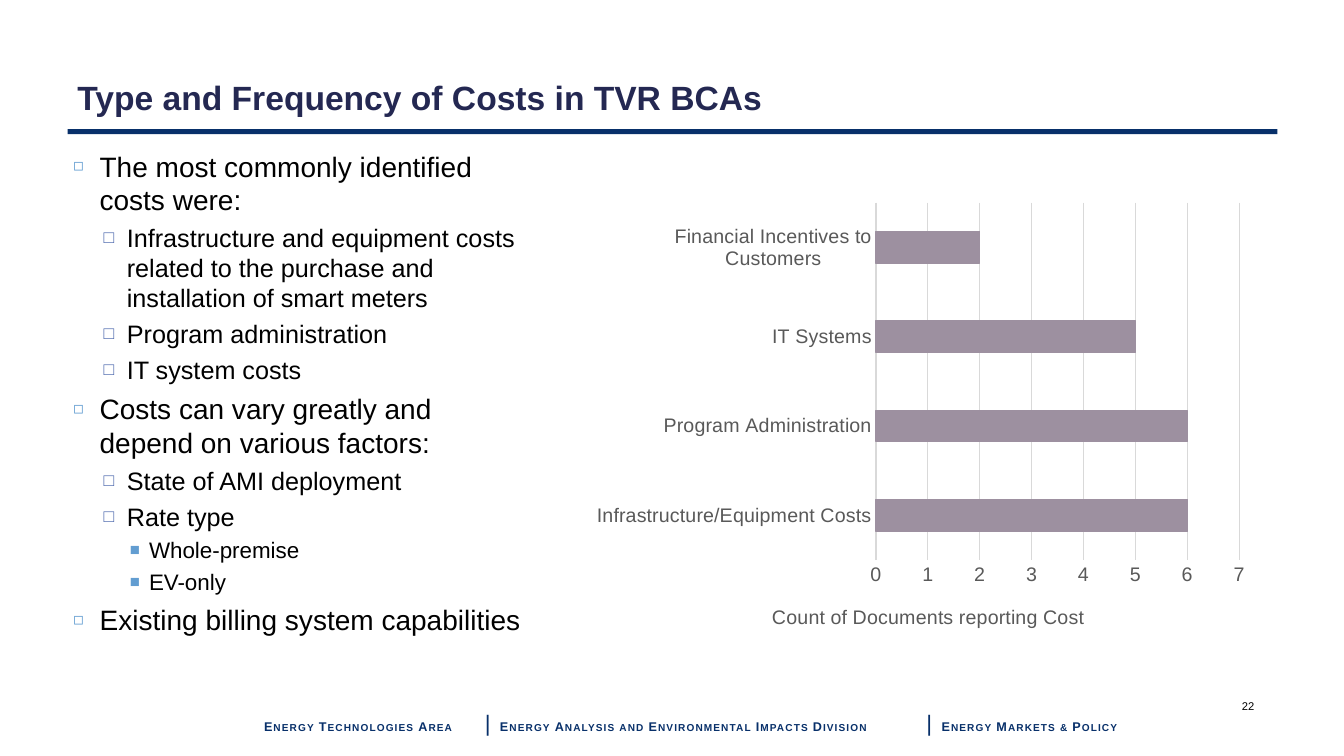
"""Build a slide on the type and frequency of costs in TVR benefit-cost analyses."""
from dataclasses import dataclass

from lxml.etree import SubElement
from pptx import Presentation
from pptx.chart.data import CategoryChartData
from pptx.dml.color import RGBColor
from pptx.enum.chart import XL_CHART_TYPE, XL_TICK_MARK
from pptx.enum.shapes import MSO_SHAPE
from pptx.enum.text import MSO_ANCHOR
from pptx.oxml.ns import qn
from pptx.util import Inches, Pt

TITLE = "Type and Frequency of Costs in TVR BCAs"
PAGE_NUMBER = "22"
FINDINGS = [
    (0, "The most commonly identified costs were:"),
    (1, "Infrastructure and equipment costs related to the purchase and installation of smart meters"),
    (1, "Program administration"),
    (1, "IT system costs"),
    (0, "Costs can vary greatly and depend on various factors:"),
    (1, "State of AMI deployment"),
    (1, "Rate type"),
    (2, "Whole-premise"),
    (2, "EV-only"),
    (0, "Existing billing system capabilities"),
]
DEPARTMENTS = [
    "Energy Technologies Area",
    "Energy Analysis and Environmental Impacts Division",
    "Energy Markets & Policy",
]
COST_COUNTS = {
    "Infrastructure/Equipment Costs": 6,
    "Program Administration": 6,
    "IT Systems": 5,
    "Financial Incentives to Customers": 2,
}
COUNT_TITLE = "Count of Documents reporting Cost"

COLUMNS, ROWS = 133.3, 75
PLACES = {
    "rule": (6.7, 12.8, 120, 0.5),
    "footer": (25.2, 69.9, 92.9, 4.8),
    "title": (6.7, 7.1, 120, 5),
    "findings": (6.3, 14.3, 47.4, 51.8),
    "number": (122.2, 68.9, 5, 4),
    "chart": (58.2, 19.2, 66.7, 44.9),
}
FOOTER_TABS = [21.9, 23.4, 65.7, 67.2]
PLOT_SHARES = {"x": 0.43, "y": 0.02, "w": 0.54, "h": 0.79}
COUNT_TITLE_SHARES = {"x": 0.27, "y": 0.9}


@dataclass(frozen=True)
class Level:
    size: int
    indent: float
    hang: float
    before: float
    bullet: str
    bullet_color: str
    bullet_share: int


@dataclass(frozen=True)
class Theme:
    font: str = "Arial"
    navy: str = "08306A"
    heading: str = "242852"
    ink: str = "000000"
    axis_ink: str = "595959"
    grid: str = "D9D9D9"
    bar: str = "9D90A0"
    title_size: int = 24
    chart_size: int = 14
    footer_size: int = 9
    divider_size: int = 16
    number_size: int = 8
    hairline: float = 0.75
    levels: tuple = (
        Level(20, 2.6, 2.6, 5.2, "◻", "629DD1", 60),
        Level(18, 5.3, 2.3, 4.1, "□", "4A66AC", 70),
        Level(16, 7.5, 1.9, 3.8, "■", "629DD1", 75),
    )


THEME = Theme()


def cells(count):
    return Inches(count / 10)


def place(part):
    return [cells(length) for length in PLACES[part]]


def style(font, size, color, bold=False):
    font.name, font.size, font.bold = THEME.font, Pt(size), bold
    font.color.rgb = RGBColor.from_string(color)


def add_run(paragraph, text, size, color, bold=False):
    run = paragraph.add_run()
    run.text = text
    style(run.font, size, color, bold)
    return run


def add_frame(slide, part):
    frame = slide.shapes.add_textbox(*place(part)).text_frame
    frame.word_wrap = True
    return frame


def add_findings(slide):
    frame = add_frame(slide, "findings")
    for index, (depth, finding) in enumerate(FINDINGS):
        level = THEME.levels[depth]
        paragraph = frame.add_paragraph() if index else frame.paragraphs[0]
        properties = paragraph._p.get_or_add_pPr()
        properties.set("marL", str(cells(level.indent)))
        properties.set("indent", str(-cells(level.hang)))
        bullet_color = SubElement(properties, qn("a:buClr"))
        SubElement(bullet_color, qn("a:srgbClr"), val=level.bullet_color)
        SubElement(properties, qn("a:buSzPct"), val=str(level.bullet_share * 1000))
        SubElement(properties, qn("a:buFont"), typeface=THEME.font)
        SubElement(properties, qn("a:buChar"), char=level.bullet)
        paragraph.level = depth
        if index:
            paragraph.space_before = Pt(level.before)
        add_run(paragraph, finding, level.size, THEME.ink)


def add_footer(slide):
    paragraph = add_frame(slide, "footer").paragraphs[0]
    tabs = SubElement(paragraph._p.get_or_add_pPr(), qn("a:tabLst"))
    for stop in FOOTER_TABS:
        SubElement(tabs, qn("a:tab"), pos=str(cells(stop)), algn="l")
    for index, department in enumerate(DEPARTMENTS):
        if index:
            add_run(paragraph, "\t|\t", THEME.divider_size, THEME.navy)
        run = add_run(paragraph, department, THEME.footer_size, THEME.navy, True)
        run.font._element.set("cap", "small")
        run.font._element.set("spc", "80")


def set_layout(parent, position, shares, inner=False):
    layout = parent.find(qn("c:layout"))
    if layout is None:
        layout = SubElement(parent, qn("c:layout"))
        parent.insert(position, layout)
    manual = SubElement(layout, qn("c:manualLayout"))
    if inner:
        SubElement(manual, qn("c:layoutTarget"), val="inner")
    for side in ("x", "y"):
        SubElement(manual, qn(f"c:{side}Mode"), val="edge")
    for side, share in shares.items():
        SubElement(manual, qn(f"c:{side}"), val=str(share))


def draw_line(line, color):
    line.color.rgb = RGBColor.from_string(color)
    line.width = Pt(THEME.hairline)


def add_cost_chart(slide):
    data = CategoryChartData()
    data.categories = list(COST_COUNTS)
    data.add_series("Series 1", list(COST_COUNTS.values()))
    chart = slide.shapes.add_chart(XL_CHART_TYPE.BAR_CLUSTERED, *place("chart"), data).chart
    chart.has_legend = chart.has_title = False
    style(chart.font, THEME.chart_size, THEME.ink)

    costs, counts = chart.category_axis, chart.value_axis
    for axis in (costs, counts):
        axis.major_tick_mark = axis.minor_tick_mark = XL_TICK_MARK.NONE
        style(axis.tick_labels.font, THEME.chart_size, THEME.axis_ink)
    draw_line(costs.format.line, THEME.grid)
    counts.format.line.fill.background()
    counts.minimum_scale, counts.maximum_scale, counts.major_unit = 0, 7, 1
    draw_line(counts.major_gridlines.format.line, THEME.grid)
    count_title = counts.axis_title
    add_run(count_title.text_frame.paragraphs[0], COUNT_TITLE, THEME.chart_size, THEME.axis_ink)
    set_layout(count_title._element, 1, COUNT_TITLE_SHARES)

    plot = chart.plots[0]
    plot.gap_width, plot.vary_by_categories = 182, False
    bars = plot.series[0].format
    bars.fill.solid()
    bars.fill.fore_color.rgb = RGBColor.from_string(THEME.bar)
    draw_line(bars.line, THEME.bar)
    set_layout(chart._chartSpace.chart.plotArea, 0, PLOT_SHARES, inner=True)


def main():
    deck = Presentation()
    deck.slide_width, deck.slide_height = cells(COLUMNS), cells(ROWS)
    slide = deck.slides.add_slide(deck.slide_layouts[6])
    rule = slide.shapes.add_shape(MSO_SHAPE.RECTANGLE, *place("rule"))
    rule.shadow.inherit = False
    rule.fill.solid()
    rule.fill.fore_color.rgb = RGBColor.from_string(THEME.navy)
    rule.line.fill.background()
    add_footer(slide)
    heading = add_frame(slide, "title")
    heading.vertical_anchor = MSO_ANCHOR.BOTTOM
    add_run(heading.paragraphs[0], TITLE, THEME.title_size, THEME.heading, True)
    add_findings(slide)
    add_run(add_frame(slide, "number").paragraphs[0], PAGE_NUMBER, THEME.number_size, THEME.ink)
    add_cost_chart(slide)
    deck.save("out.pptx")


if __name__ == "__main__":
    main()
